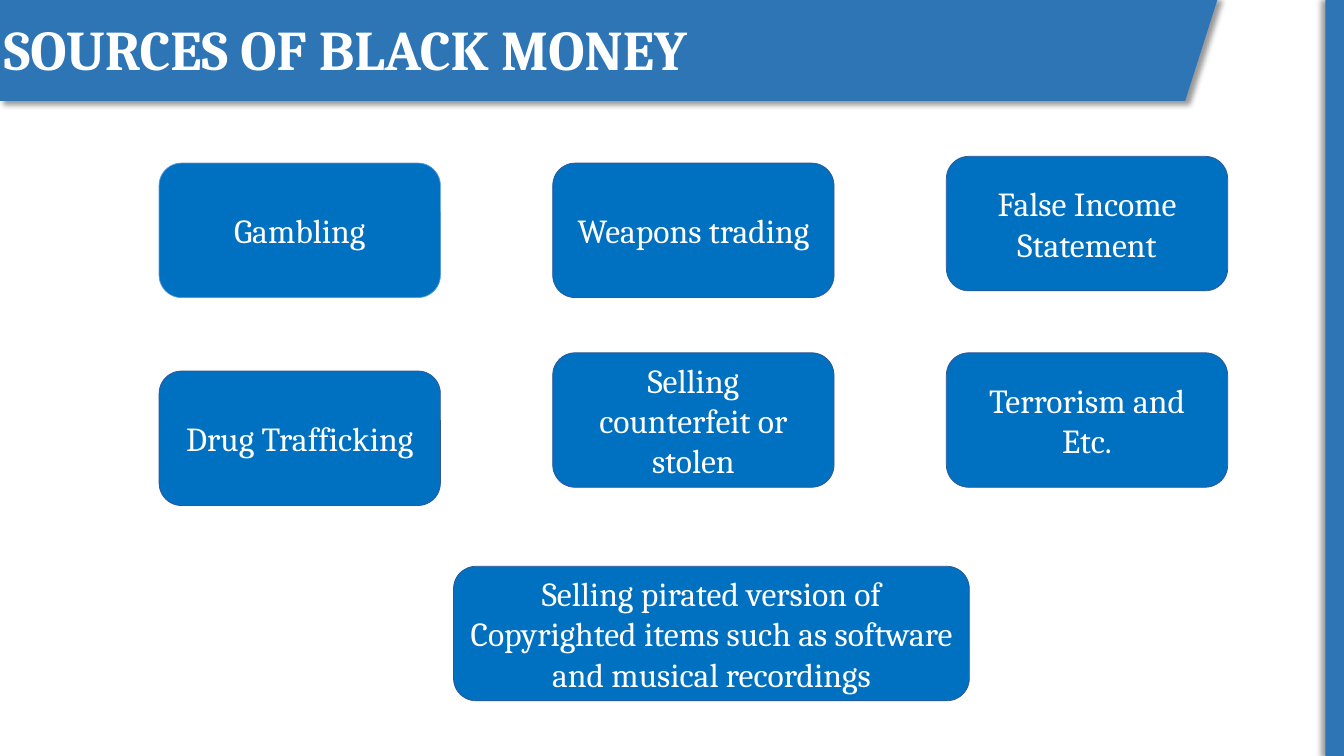
from lxml.etree import SubElement
from pptx import Presentation
from pptx.dml.color import RGBColor
from pptx.enum.shapes import MSO_SHAPE as SHAPE
from pptx.enum.text import MSO_ANCHOR as ANCHOR, PP_ALIGN as ALIGN
from pptx.oxml.ns import qn
from pptx.util import Cm, Pt

FONT = "Cambria"
WHITE, BAND, BOX = "FFFFFF", "2E75B6", "0070C0"
EDGE, LIGHT_EDGE = "2F5597", "5B9BD5"
BOX_W, BOX_H, COLUMN_STEP = 7.09, 3.39, 9.92

# Each column: (top, text, edge colour) from top to bottom
COLUMNS = [
    [(4.11, "Gambling", LIGHT_EDGE), (9.35, "Drug Trafficking", EDGE)],
    [(4.11, "Weapons trading", EDGE), (8.89, "Selling counterfeit or stolen", EDGE)],
    [(3.94, "False Income Statement", EDGE), (8.89, "Terrorism and Etc.", EDGE)],
]
PIRACY = ("Selling pirated version of Copyrighted items such as software "
          "and musical recordings")


def rgb(code):
    return RGBColor.from_string(code)


def paint(s, fill, edge=None):
    s.shadow.inherit = False
    s.fill.solid()
    s.fill.fore_color.rgb = rgb(fill)
    if edge:
        s.line.color.rgb = rgb(edge)
        s.line.width = Pt(0.5)
    else:
        s.line.fill.background()


def cast_shadow(s, angle):
    """Give a painted shape a soft black shadow falling at angle degrees."""
    effects = s._element.spPr.find(qn("a:effectLst"))
    shadow = SubElement(effects, qn("a:outerShdw"), blurRad=str(Pt(4)),
                        dist=str(Pt(3)), dir=str(angle * 60000),
                        algn="ctr", rotWithShape="0")
    color = SubElement(shadow, qn("a:srgbClr"), val="000000")
    SubElement(color, qn("a:alpha"), val="40000")


def write(s, text, size, align, bold=False):
    tf = s.text_frame
    tf.word_wrap = True
    tf.vertical_anchor = ANCHOR.MIDDLE
    p = tf.paragraphs[0]
    p.alignment = align
    r = p.add_run()
    r.text = text
    r.font.name = FONT
    r.font.size = Pt(size)
    r.font.bold = bold
    r.font.color.rgb = rgb(WHITE)


def add_source(shapes, left, top, width, height, text, edge=EDGE):
    s = shapes.add_shape(SHAPE.ROUNDED_RECTANGLE,
                         Cm(left), Cm(top), Cm(width), Cm(height))
    paint(s, BOX, edge)
    write(s, text, 24, ALIGN.CENTER)


def add_sources(shapes, left):
    for i, column in enumerate(COLUMNS):
        for top, text, edge in column:
            add_source(shapes, left + i * COLUMN_STEP, top, BOX_W, BOX_H, text, edge)
    add_source(shapes, left + 7.42, 14.27, 13, BOX_H, PIRACY)


def add_side_bar(shapes, left, top, width, height):
    s = shapes.add_shape(SHAPE.RECTANGLE, Cm(left), Cm(top), Cm(width), Cm(height))
    paint(s, BAND)
    cast_shadow(s, 180)


def add_title_band(shapes, left, top, width, height, text):
    """Draw the title on a band whose right end slants inwards."""
    right, bottom = left + width, top + height
    corners = [(right, top), (right - 0.84, bottom), (left, bottom)]
    builder = shapes.build_freeform(Cm(left), Cm(top + 0.05))
    builder.add_line_segments([(Cm(x), Cm(y)) for x, y in corners], close=True)
    s = builder.convert_to_shape()
    paint(s, BAND)
    cast_shadow(s, 45)
    write(s, text, 40, ALIGN.LEFT, bold=True)
    s.text_frame.margin_left = Cm(0.1)


def main():
    prs = Presentation()
    prs.slide_width, prs.slide_height = Cm(33.87), Cm(19.05)
    shapes = prs.slides.add_slide(prs.slide_layouts[6]).shapes
    add_sources(shapes, 4.01)
    add_side_bar(shapes, 33.4, 0, 0.47, 19.05)
    add_title_band(shapes, 0, -0.1, 30.71, 2.64, "SOURCES OF BLACK MONEY")
    prs.save("out.pptx")


if __name__ == "__main__":
    main()
